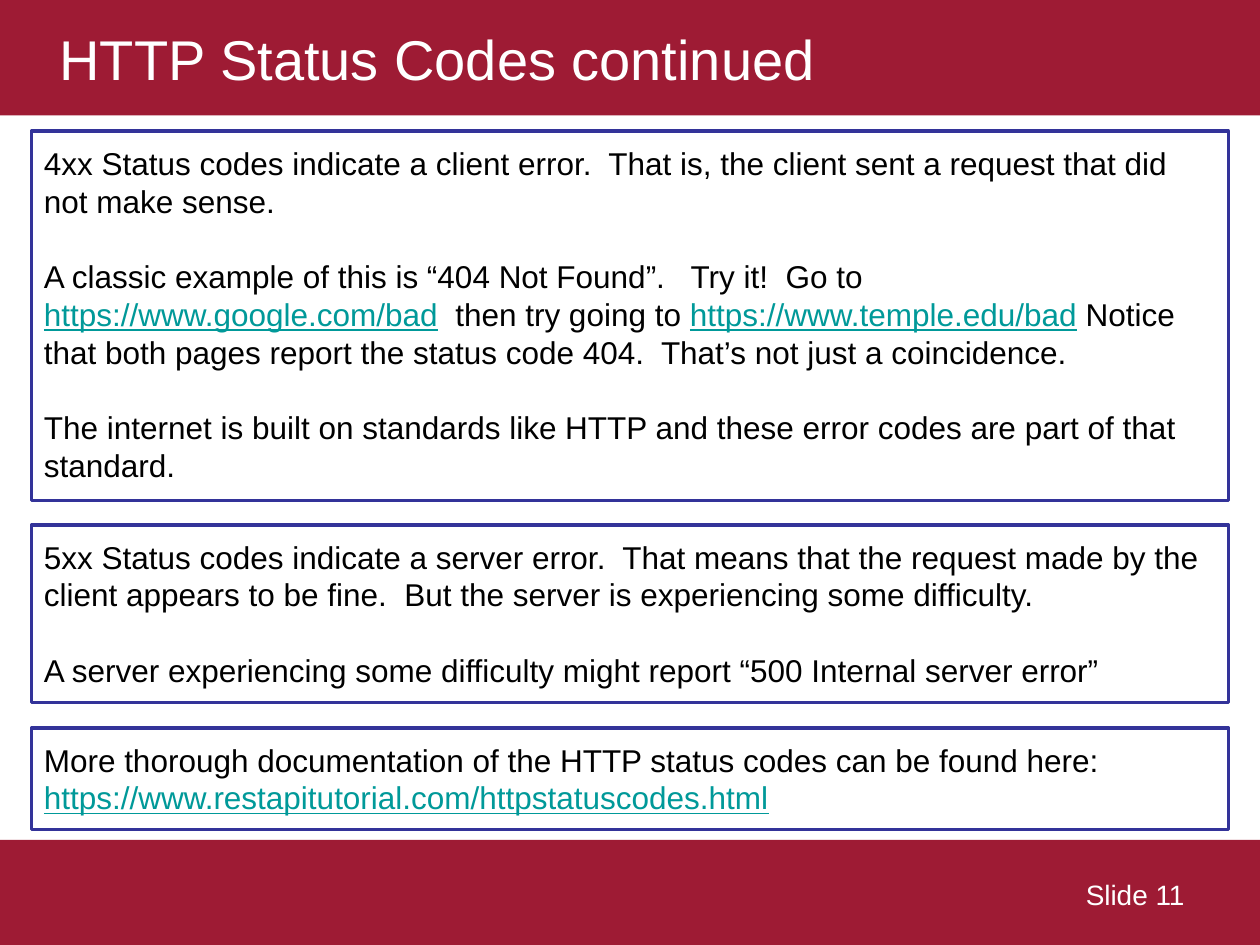
from pptx import Presentation
from pptx.dml.color import RGBColor
from pptx.enum import shapes, text
from pptx.util import Pt

CHERRY, NAVY, TEAL = "9E1B34", "333399", "009999"
BLACK, WHITE = "000000", "FFFFFF"
LINE_PITCH = 21.6

# Each panel is (top, height, paragraphs); a paragraph is a list of text pieces.
PANELS = [
    (75, 211, [
        ["4xx Status codes indicate a client error.  That is, the client sent "
         "a request that did not make sense."],
        ["A classic example of this is “404 Not Found”.   Try it!  Go to ",
         "https://www.google.com/bad", "  then try going to ",
         "https://www.temple.edu/bad",
         " Notice that both pages report the status code 404.  "
         "That’s not just a coincidence."],
        ["The internet is built on standards like HTTP and these error codes "
         "are part of that standard."],
    ]),
    (300, 101.5, [
        ["5xx Status codes indicate a server error.  That means that the "
         "request made by the client appears to be fine.  But the server is "
         "experiencing some difficulty."],
        ["A server experiencing some difficulty might report "
         "“500 Internal server error”"],
    ]),
    (416, 58, [
        ["More thorough documentation of the HTTP status codes can be found here:"],
        ["https://www.restapitutorial.com/httpstatuscodes.html"],
    ]),
]


def color(value):
    return RGBColor.from_string(value)


def fill(shape, value):
    shape.fill.solid()
    shape.fill.fore_color.rgb = color(value)


def set_font(paragraph, size, value):
    paragraph.font.name = "Arial"
    paragraph.font.size = Pt(size)
    paragraph.font.color.rgb = color(value)


def place(shape, left, top, width, height):
    shape.left, shape.top = Pt(left), Pt(top)
    shape.width, shape.height = Pt(width), Pt(height)


def add_rectangle(slide, left, top, width, height, fill_color):
    shape = slide.shapes.add_shape(
        shapes.MSO_SHAPE.RECTANGLE, Pt(left), Pt(top), Pt(width), Pt(height))
    shape.shadow.inherit = False
    fill(shape, fill_color)
    shape.line.fill.background()
    return shape


def format_title(slide, words):
    title = slide.shapes.title
    place(title, 0, 0, 720, 66)
    fill(title, CHERRY)
    frame = title.text_frame
    frame.text = words
    frame.margin_left = Pt(34)
    frame.vertical_anchor = text.MSO_ANCHOR.MIDDLE
    paragraph = frame.paragraphs[0]
    paragraph.alignment = text.PP_ALIGN.LEFT
    set_font(paragraph, 32, WHITE)


def add_slide_label(slide, words):
    box = slide.shapes.add_textbox(Pt(516), Pt(498), Pt(168), Pt(24))
    box.text_frame.word_wrap = True
    paragraph = box.text_frame.paragraphs[0]
    paragraph.text = words
    paragraph.alignment = text.PP_ALIGN.RIGHT
    set_font(paragraph, 16, WHITE)


def add_pieces(paragraph, pieces):
    """Write the pieces as runs, styling web addresses as links."""
    for piece in pieces:
        run = paragraph.add_run()
        run.text = piece
        if piece.startswith("https://"):
            run.font.color.rgb = color(TEAL)
            run.font.underline = True


def add_panel(slide, top, height, paragraphs):
    panel = add_rectangle(slide, 18, top, 684, height, WHITE)
    panel.line.color.rgb = color(NAVY)
    panel.line.width = Pt(2)
    frame = panel.text_frame
    frame.word_wrap = True
    frame.vertical_anchor = text.MSO_ANCHOR.TOP
    frame.margin_left = frame.margin_right = Pt(7.2)
    frame.margin_top = frame.margin_bottom = Pt(7.2)
    for index, pieces in enumerate(paragraphs):
        paragraph = frame.add_paragraph() if index else frame.paragraphs[0]
        paragraph.alignment = text.PP_ALIGN.LEFT
        paragraph.line_spacing = Pt(LINE_PITCH)
        # A paragraph that is only a link follows its lead-in directly.
        if index and not pieces[0].startswith("https://"):
            paragraph.space_before = Pt(LINE_PITCH)
        set_font(paragraph, 18, BLACK)
        add_pieces(paragraph, pieces)


def main():
    presentation = Presentation()
    presentation.slide_width, presentation.slide_height = Pt(720), Pt(540)
    slide = presentation.slides.add_slide(presentation.slide_layouts[5])
    format_title(slide, "HTTP Status Codes continued")
    add_rectangle(slide, 0, 480, 720, 60, CHERRY)
    add_slide_label(slide, "Slide 11")
    for top, height, paragraphs in PANELS:
        add_panel(slide, top, height, paragraphs)
    presentation.save("out.pptx")


if __name__ == "__main__":
    main()
